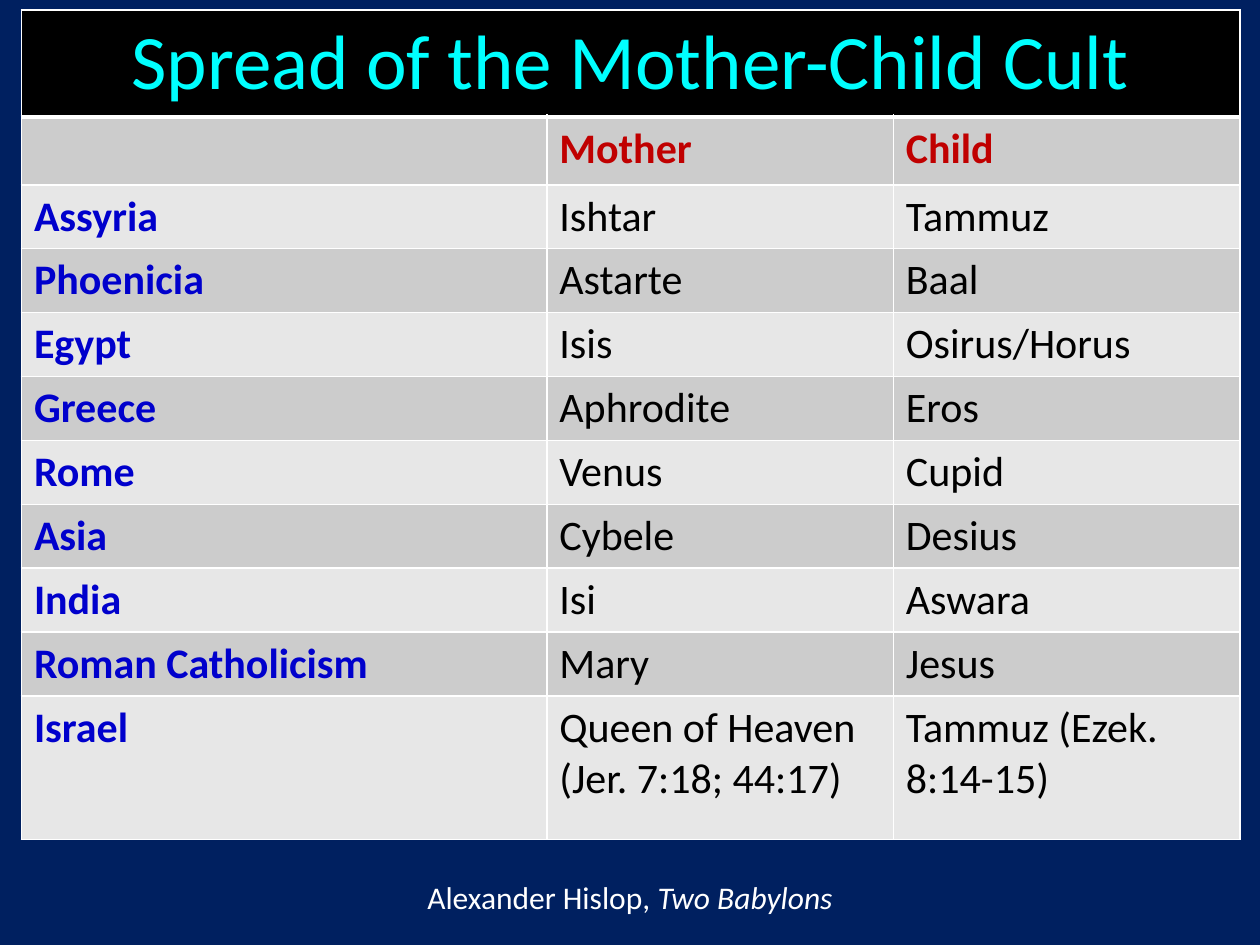
from typing import NamedTuple

from lxml import etree
from pptx import Presentation
from pptx.dml.color import RGBColor
from pptx.enum.text import MSO_ANCHOR, PP_ALIGN
from pptx.oxml.ns import qn
from pptx.util import Inches, Pt

CENTER, LEFT = PP_ALIGN.CENTER, PP_ALIGN.LEFT
MIDDLE, TOP = MSO_ANCHOR.MIDDLE, MSO_ANCHOR.TOP

NAVY = RGBColor(0x00, 0x20, 0x60)
BLACK = RGBColor(0x00, 0x00, 0x00)
WHITE = RGBColor(0xFF, 0xFF, 0xFF)
CYAN = RGBColor(0x00, 0xFF, 0xFF)
RED = RGBColor(0xC0, 0x00, 0x00)
BLUE = RGBColor(0x00, 0x00, 0xCC)
DARK = RGBColor(0xCC, 0xCC, 0xCC)
LIGHT = RGBColor(0xE7, 0xE7, 0xE7)

FONT = "Calibri"
WIDTHS = (4.17, 2.75, 2.75)
HEIGHTS = (0.83, 0.54, *[0.5] * 8, 1.14)


class Style(NamedTuple):
    size: int
    color: RGBColor
    bold: bool = False
    italic: bool = False


class Cult(NamedTuple):
    place: str
    mother: str
    child: str


TITLE = Style(44, CYAN)
HEAD = Style(24, RED, bold=True)
PLACE = Style(24, BLUE, bold=True)
NAME = Style(24, BLACK)
CREDIT = Style(18, WHITE)
BOOK = Style(18, WHITE, italic=True)

CULTS = (
    Cult("", "Mother", "Child"),
    Cult("Assyria", "Ishtar", "Tammuz"),
    Cult("Phoenicia", "Astarte", "Baal"),
    Cult("Egypt", "Isis", "Osirus/Horus"),
    Cult("Greece", "Aphrodite", "Eros"),
    Cult("Rome", "Venus", "Cupid"),
    Cult("Asia", "Cybele", "Desius"),
    Cult("India", "Isi", "Aswara"),
    Cult("Roman Catholicism", "Mary", "Jesus"),
    Cult("Israel", "Queen of Heaven (Jer. 7:18; 44:17)", "Tammuz (Ezek. 8:14-15)"),
)


def add_run(para, text: str, style: Style) -> None:
    run = para.add_run()
    run.text = text
    font = run.font
    font.name, font.size = FONT, Pt(style.size)
    font.bold, font.italic = style.bold, style.italic
    font.color.rgb = style.color


def set_edges(cell, top: int = 1, base: int = 1) -> None:
    """Give the cell white borders; widths are in points."""
    props = cell._tc.get_or_add_tcPr()
    edges = (("a:lnL", 1), ("a:lnR", 1), ("a:lnT", top), ("a:lnB", base))
    for spot, (tag, width) in enumerate(edges):
        line = etree.Element(qn(tag), w=str(Pt(width)))
        fill = etree.SubElement(line, qn("a:solidFill"))
        etree.SubElement(fill, qn("a:srgbClr"), val=str(WHITE))
        props.insert(spot, line)


def fill_cell(cell, text: str, style: Style, back: RGBColor,
              align=LEFT, anchor=TOP) -> None:
    cell.fill.solid()
    cell.fill.fore_color.rgb = back
    cell.vertical_anchor = anchor
    para = cell.text_frame.paragraphs[0]
    para.alignment = align
    if text:
        add_run(para, text, style)
    else:
        para.font.size = Pt(style.size)


def add_cults(slide) -> None:
    frame = slide.shapes.add_table(
        len(HEIGHTS), len(WIDTHS), Inches(0.17), Inches(0.08),
        Inches(sum(WIDTHS)), Inches(sum(HEIGHTS)))
    table = frame.table
    for col, width in zip(table.columns, WIDTHS):
        col.width = Inches(width)
    for row, height in zip(table.rows, HEIGHTS):
        row.height = Inches(height)

    title = table.cell(0, 0)
    title.merge(table.cell(0, len(WIDTHS) - 1))
    fill_cell(title, "Spread of the Mother-Child Cult", TITLE, BLACK, CENTER, MIDDLE)
    for col in range(len(WIDTHS)):
        set_edges(table.cell(0, col), base=3)

    for row, cult in enumerate(CULTS, 1):
        back = DARK if row % 2 else LIGHT
        for col, text in enumerate(cult):
            style = HEAD if row == 1 else NAME if col else PLACE
            cell = table.cell(row, col)
            fill_cell(cell, text, style, back)
            set_edges(cell, top=3 if row == 1 else 1)


def add_credit(slide) -> None:
    box = slide.shapes.add_textbox(Inches(3), Inches(6.92), Inches(4), Inches(0.42))
    box.text_frame.word_wrap = True
    para = box.text_frame.paragraphs[0]
    para.alignment = CENTER
    add_run(para, "Alexander Hislop, ", CREDIT)
    add_run(para, "Two Babylons", BOOK)


def main() -> None:
    deck = Presentation()
    deck.slide_width, deck.slide_height = Inches(10), Inches(7.5)
    slide = deck.slides.add_slide(deck.slide_layouts[6])
    slide.background.fill.solid()
    slide.background.fill.fore_color.rgb = NAVY
    add_cults(slide)
    add_credit(slide)
    deck.save("out.pptx")


if __name__ == "__main__":
    main()
